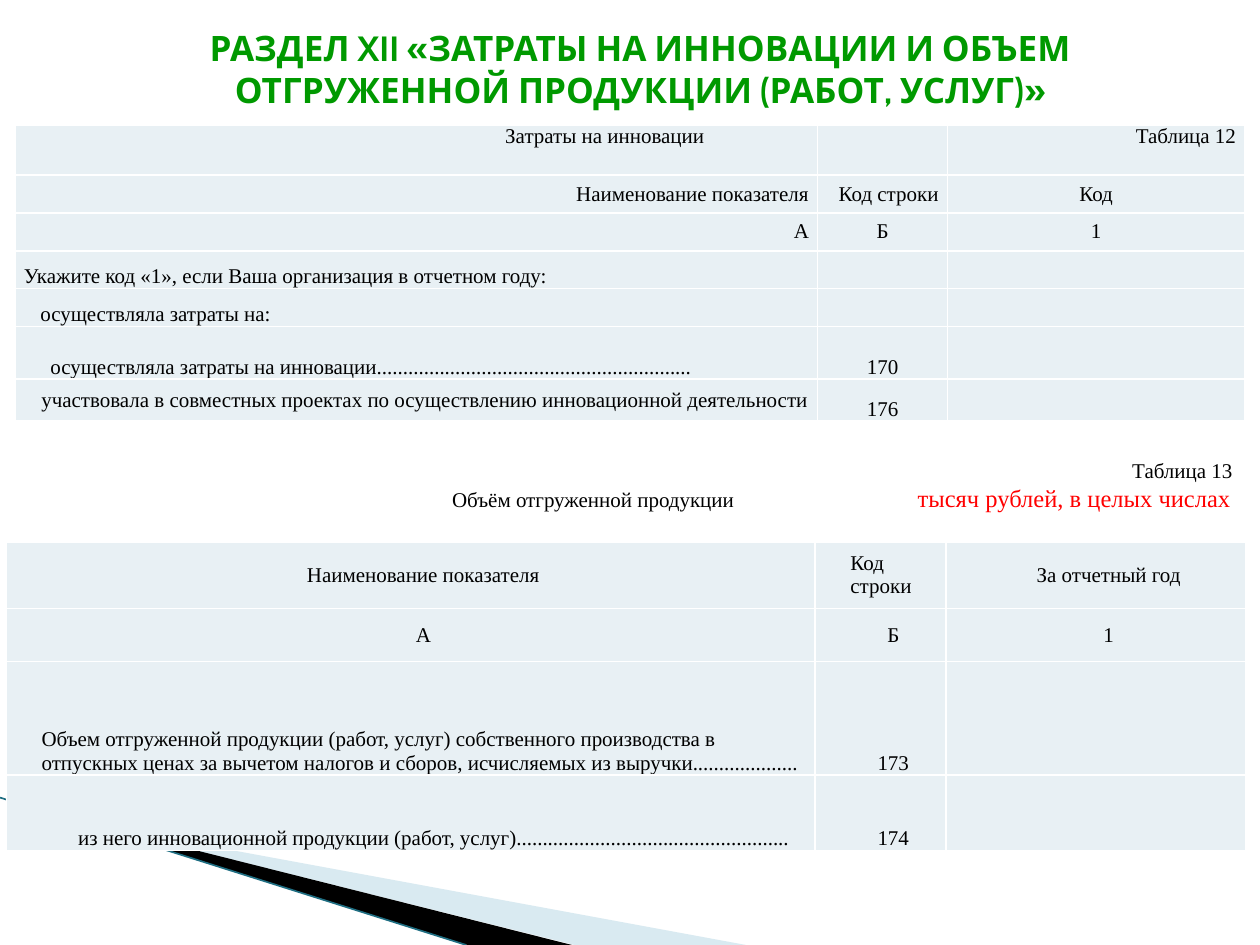
from lxml import etree
from pptx import Presentation
from pptx import util as u
from pptx.dml.color import RGBColor
from pptx.enum import shapes, text
from pptx.oxml.ns import qn

# Grid: 100 columns by 75 rows, each a tenth of an inch
COLUMNS, ROWS = 100, 75
CELL = u.Inches(0.1)

GREEN = RGBColor(0x00, 0x99, 0x00)
RED = RGBColor(0xFF, 0x00, 0x00)
BLACK = RGBColor(0x00, 0x00, 0x00)
WHITE = RGBColor(0xFF, 0xFF, 0xFF)
PALE = RGBColor(0xE8, 0xF0, 0xF4)
SKY = RGBColor(0xA0, 0xCB, 0xDC)
TEAL = RGBColor(0x1F, 0x6E, 0x82)

LEFT, CENTER, RIGHT = text.PP_ALIGN.LEFT, text.PP_ALIGN.CENTER, text.PP_ALIGN.RIGHT
TOP, MIDDLE, BOTTOM = (text.MSO_ANCHOR.TOP, text.MSO_ANCHOR.MIDDLE,
                       text.MSO_ANCHOR.BOTTOM)


def grid(*values):
    return [u.Emu(round(value * CELL)) for value in values]


class FormSlide:
    heading_font, body_font, body_size = "Cabin", "Times New Roman", 12

    def __init__(self, presentation):
        self.slide = presentation.slides.add_slide(presentation.slide_layouts[5])
        self.shapes = self.slide.shapes

    def style(self, run, size=body_size, color=BLACK, name=body_font, bold=False):
        run.font.size, run.font.name, run.font.bold = u.Pt(size), name, bold
        run.font.color.rgb = color

    def indent(self, paragraph, amount):
        properties = paragraph._p.get_or_add_pPr()
        properties.set("marL", str(grid(amount)[0]))
        properties.set("indent", "0")

    def title(self, wording, box):
        shape = self.shapes.title
        shape.left, shape.top, shape.width, shape.height = grid(*box)
        frame = shape.text_frame
        frame.text, frame.word_wrap, frame.vertical_anchor = wording, True, MIDDLE
        frame.paragraphs[0].alignment = CENTER
        self.style(frame.paragraphs[0].runs[0], 20, GREEN, self.heading_font, True)

    def wedge(self, points, color, alpha=100):
        start, *others = [grid(*point) for point in points]
        builder = self.shapes.build_freeform(*start)
        builder.add_line_segments(others, close=True)
        shape = builder.convert_to_shape()
        shape.shadow.inherit = False
        shape.fill.solid()
        shape.fill.fore_color.rgb = color
        shape.line.fill.background()
        if alpha < 100:
            tone = shape.fill._xPr.find(".//" + qn("a:srgbClr"))
            etree.SubElement(tone, qn("a:alpha")).set("val", str(alpha * 1000))

    def line(self, start, end, color, width):
        connector = self.shapes.add_connector(
            shapes.MSO_CONNECTOR.STRAIGHT, *grid(*start, *end))
        connector.line.color.rgb, connector.line.width = color, u.Pt(width)
        etree.SubElement(connector._element.spPr, qn("a:effectLst"))

    def borders(self, cell):
        properties = cell._tc.get_or_add_tcPr()
        for side in ("lnL", "lnR", "lnT", "lnB"):
            edge = etree.SubElement(properties, qn("a:" + side), w=str(u.Pt(1)))
            fill = etree.SubElement(edge, qn("a:solidFill"))
            etree.SubElement(fill, qn("a:srgbClr"), val=str(WHITE))

    def table(self, corner, widths, heights, rows, inset):
        """Each cell is None or (wording, alignment, anchor, indent)."""
        size = sum(widths), sum(heights)
        table = self.shapes.add_table(
            len(heights), len(widths), *grid(*corner, *size)).table
        table.first_row = table.horz_banding = False
        for column, width in zip(table.columns, grid(*widths)):
            column.width = width
        for row, height, contents in zip(table.rows, grid(*heights), rows):
            row.height = height
            for cell, content in zip(row.cells, contents):
                self.cell(cell, content, inset)

    def cell(self, cell, content, inset):
        self.borders(cell)
        cell.fill.solid()
        cell.fill.fore_color.rgb = PALE
        cell.margin_left = cell.margin_right = grid(inset)[0]
        cell.margin_top = cell.margin_bottom = 0
        paragraph = cell.text_frame.paragraphs[0]
        if content is None:
            etree.SubElement(paragraph._p, qn("a:endParaRPr"),
                             sz=str(self.body_size * 100))
            return
        paragraph.text, paragraph.alignment, cell.vertical_anchor, indent = content
        self.indent(paragraph, indent)
        self.style(paragraph.runs[0])

    def caption(self, box, label, heading, unit, heading_end, unit_end):
        frame = self.shapes.add_textbox(*grid(*box)).text_frame
        frame.word_wrap, frame.vertical_anchor = True, MIDDLE
        first, second = frame.paragraphs[0], frame.add_paragraph()
        first.text, first.alignment = label, RIGHT
        self.style(first.runs[0])
        # Right tabs place the heading and the unit on one line
        tabs = etree.SubElement(second._p.get_or_add_pPr(), qn("a:tabLst"))
        for position in grid(heading_end, unit_end):
            etree.SubElement(tabs, qn("a:tab"), pos=str(position), algn="r")
        second.alignment = LEFT
        for wording, size, color in ((heading, 12, BLACK), (unit, 14, RED)):
            run = second.add_run()
            run.text = "\t" + wording
            self.style(run, size, color)


def dotted(wording, count):
    return wording + "." * count


def main():
    presentation = Presentation()
    presentation.slide_width, presentation.slide_height = grid(COLUMNS, ROWS)
    form = FormSlide(presentation)

    # Corner decoration
    form.wedge([(5.5, 65.1), (59.2, ROWS), (45.6, ROWS), (5.5, 65)], SKY, 40)
    form.wedge([(5.3, 64.9), (45.4, ROWS), (37.1, ROWS), (5.4, 65)], BLACK)
    form.line((0, 63.3), (37, ROWS), TEAL, 0.95)

    # Title
    form.title("РАЗДЕЛ XII «ЗАТРАТЫ НА ИННОВАЦИИ И ОБЪЕМ "
               "ОТГРУЖЕННОЙ ПРОДУКЦИИ (РАБОТ, УСЛУГ)»", (6.2, 0, 89.2, 10.8))

    # Table 12: innovation costs
    form.table((1.2, 9.9), (63.7, 10.3, 23.6), (4, 3, 3, 3, 3, 4.2, 3.3), [
        [("Затраты на инновации", LEFT, TOP, 38.2), None,
         ("Таблица 12", RIGHT, TOP, 0)],
        [("Наименование показателя", RIGHT, MIDDLE, 0),
         ("Код строки", RIGHT, MIDDLE, 0), ("Код", CENTER, MIDDLE, 0)],
        [("А", RIGHT, MIDDLE, 0), ("Б", CENTER, MIDDLE, 0),
         ("1", CENTER, MIDDLE, 0)],
        [("Укажите код «1», если Ваша организация в отчетном году:",
          LEFT, BOTTOM, 0), None, None],
        [("осуществляла затраты на:", LEFT, BOTTOM, 1.3), None, None],
        [(dotted("осуществляла затраты на инновации", 60), LEFT, BOTTOM, 2.1),
         ("170", CENTER, BOTTOM, 0), None],
        [("участвовала в совместных проектах по осуществлению "
          "инновационной деятельности", RIGHT, MIDDLE, 0),
         ("176", CENTER, BOTTOM, 0), None],
    ], inset=0.7)

    # Table 13: shipped products
    form.table((0.5, 43), (64.2, 10.4, 23.8), (5.3, 4.2, 9, 6), [
        [("Наименование показателя", CENTER, MIDDLE, 2),
         ("Код строки", LEFT, MIDDLE, 2), ("За отчетный год", CENTER, MIDDLE, 2)],
        [(mark, CENTER, MIDDLE, 2) for mark in ("А", "Б", "1")],
        [(dotted("Объем отгруженной продукции (работ, услуг) собственного "
                 "производства в отпускных ценах за вычетом налогов и сборов, "
                 "исчисляемых из выручки", 20), LEFT, BOTTOM, 2),
         ("173", CENTER, BOTTOM, 2), None],
        [(dotted("из него инновационной продукции (работ, услуг)", 52),
          LEFT, BOTTOM, 4.9), ("174", CENTER, BOTTOM, 2), None],
    ], inset=0.8)

    # Caption of table 13
    form.caption((2.7, 35.8, 96.1, 5.4), "Таблица 13", "Объём отгруженной продукции",
                 "тысяч рублей, в целых числах", heading_end=54.6, unit_end=94)

    presentation.save("out.pptx")


if __name__ == "__main__":
    main()
